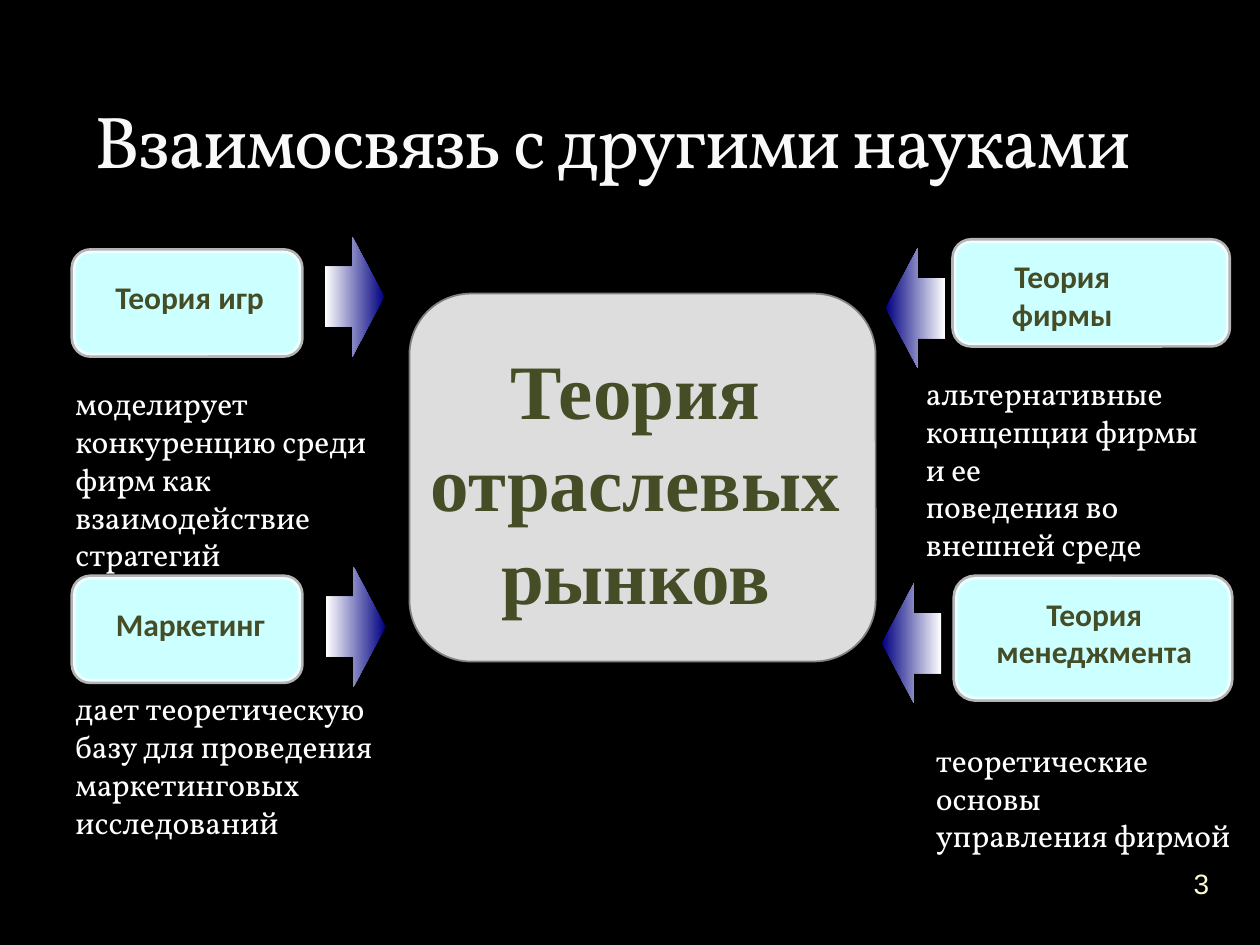
"""Build a slide on how industrial organisation theory relates to other sciences."""
import pptx
import pptx.util
import pptx.dml.color
import pptx.enum.shapes
import pptx.enum.text
import pptx.oxml
import pptx.oxml.ns

Pt = pptx.util.Pt
Kind = pptx.enum.shapes.MSO_SHAPE
Align = pptx.enum.text.PP_ALIGN
Anchor = pptx.enum.text.MSO_ANCHOR

THEME = {
    "back": "000000", "card": "CCFFFF", "edge": "FFFFFF",
    "core": "DDDDDD", "rim": "808080", "tip": "000080", "tail": "FFFFFF",
    "title": ("Vollkorn", 42, "F9F9F9", False),
    "main": ("Times New Roman", 44, "444D26", True),
    "label": ("Calibri", 18, "444D26", True),
    "note": ("Vollkorn", 18, "FFFFFF", False),
    "page": ("Arial", 16, "FEFAC9", False),
}

COLS, ROWS = 100, 75
ARROW = (9.5, 4.7)

TITLE = ("Взаимосвязь с другими науками", (6.5, 2.9, 91, 12.1))
MAIN = ("Теория отраслевых рынков", (32.8, 26.7, 35.3, 23))
CORE = (32.5, 23.3, 37, 29.2)
PAGE = ("3", (92, 67.6, 6.7, 5))

TOPICS = [
    {"label": "Теория игр", "card": (5.8, 19.9, 18.1, 8.3),
     "text": (6.7, 21.6, 16.7, 4), "arrow": (23.4, 21.2, 90),
     "note": ["моделирует конкуренцию среди фирм как взаимодействие стратегий"],
     "area": (5, 30, 25.8, 16)},
    {"label": "Маркетинг", "card": (5.8, 45.8, 18.1, 8.3),
     "text": (7.5, 47.5, 15.2, 4), "arrow": (23.5, 47.4, 90),
     "note": ["дает теоретическую базу для проведения маркетинговых",
              "исследований"],
     "area": (5, 54.2, 26.7, 13.1)},
    {"label": "Теория фирмы", "card": (75.7, 19.1, 21.8, 8.3),
     "text": (76.7, 19.9, 15.2, 7), "arrow": (67.9, 22.1, 270),
     "note": ["альтернативные концепции фирмы и ее",
              "поведения во внешней среде"],
     "area": (72.5, 29.2, 25, 16)},
    {"label": "Теория менеджмента", "card": (75.8, 45.8, 21.9, 9.7),
     "text": (77.5, 46.7, 18.7, 7), "arrow": (67.6, 48.7, 270),
     "note": ["теоретические основы", "управления фирмой"],
     "area": (73.3, 58.3, 26.7, 10)},
]

deck = pptx.Presentation()
deck.slide_width = pptx.util.Inches(10)
deck.slide_height = pptx.util.Inches(7.5)
slide = deck.slides.add_slide(deck.slide_layouts[6])


def tint(code):
    return pptx.dml.color.RGBColor.from_string(code)


def place(area):
    x, y, w, h = area
    col, row = deck.slide_width / COLS, deck.slide_height / ROWS
    return [round(n) for n in (x * col, y * row, w * col, h * row)]


def shape(kind, area):
    item = slide.shapes.add_shape(kind, *place(area))
    item.shadow.inherit = False
    return item


def panel(area, fill, line, width):
    item = shape(Kind.ROUNDED_RECTANGLE, area)
    item.fill.solid()
    item.fill.fore_color.rgb = tint(fill)
    item.line.color.rgb = tint(line)
    item.line.width = Pt(width)
    return item


def card(area):
    item = panel(area, THEME["card"], THEME["edge"], 3)
    color = item.line._ln.find(".//" + pptx.oxml.ns.qn("a:srgbClr"))
    color.append(pptx.oxml.parse_xml(
        f'<a:alpha {pptx.oxml.ns.nsdecls("a")} val="70000"/>'))


def arrow(x, y, turn):
    item = shape(Kind.UP_ARROW, (x, y, *ARROW))
    item.adjustments[0], item.adjustments[1] = 0.5, 0.54
    item.rotation = turn
    item.line.fill.background()
    item.fill.gradient()
    item.fill.gradient_angle = 270
    for stop, part in zip(item.fill.gradient_stops, ("tip", "tail")):
        stop.color.rgb = tint(THEME[part])
        stop.position = 0 if part == "tip" else 1


def write(lines, area, style, align=Align.LEFT, anchor=Anchor.TOP):
    name, size, color, bold = THEME[style]
    frame = slide.shapes.add_textbox(*place(area)).text_frame
    frame.word_wrap = True
    frame.vertical_anchor = anchor
    for i, line in enumerate(lines):
        para = frame.add_paragraph() if i else frame.paragraphs[0]
        para.alignment = align
        run = para.add_run()
        run.text = line
        font = run.font
        font.name, font.size, font.bold = name, Pt(size), bold
        font.color.rgb = tint(color)
        if style == "title":
            font._element.set("spc", "-100")
    return frame


def main():
    slide.background.fill.solid()
    slide.background.fill.fore_color.rgb = tint(THEME["back"])
    write([TITLE[0]], TITLE[1], "title", anchor=Anchor.BOTTOM)
    panel(CORE, THEME["core"], THEME["rim"], 1)
    write([MAIN[0]], MAIN[1], "main", Align.CENTER)
    for topic in TOPICS:
        card(topic["card"])
        arrow(*topic["arrow"])
        write([topic["label"]], topic["text"], "label", Align.CENTER)
        write(topic["note"], topic["area"], "note")
    page = write([PAGE[0]], PAGE[1], "page", Align.CENTER, Anchor.MIDDLE)
    page.margin_left = page.margin_right = 0
    page.margin_top = page.margin_bottom = 0
    deck.save("out.pptx")


if __name__ == "__main__":
    main()
